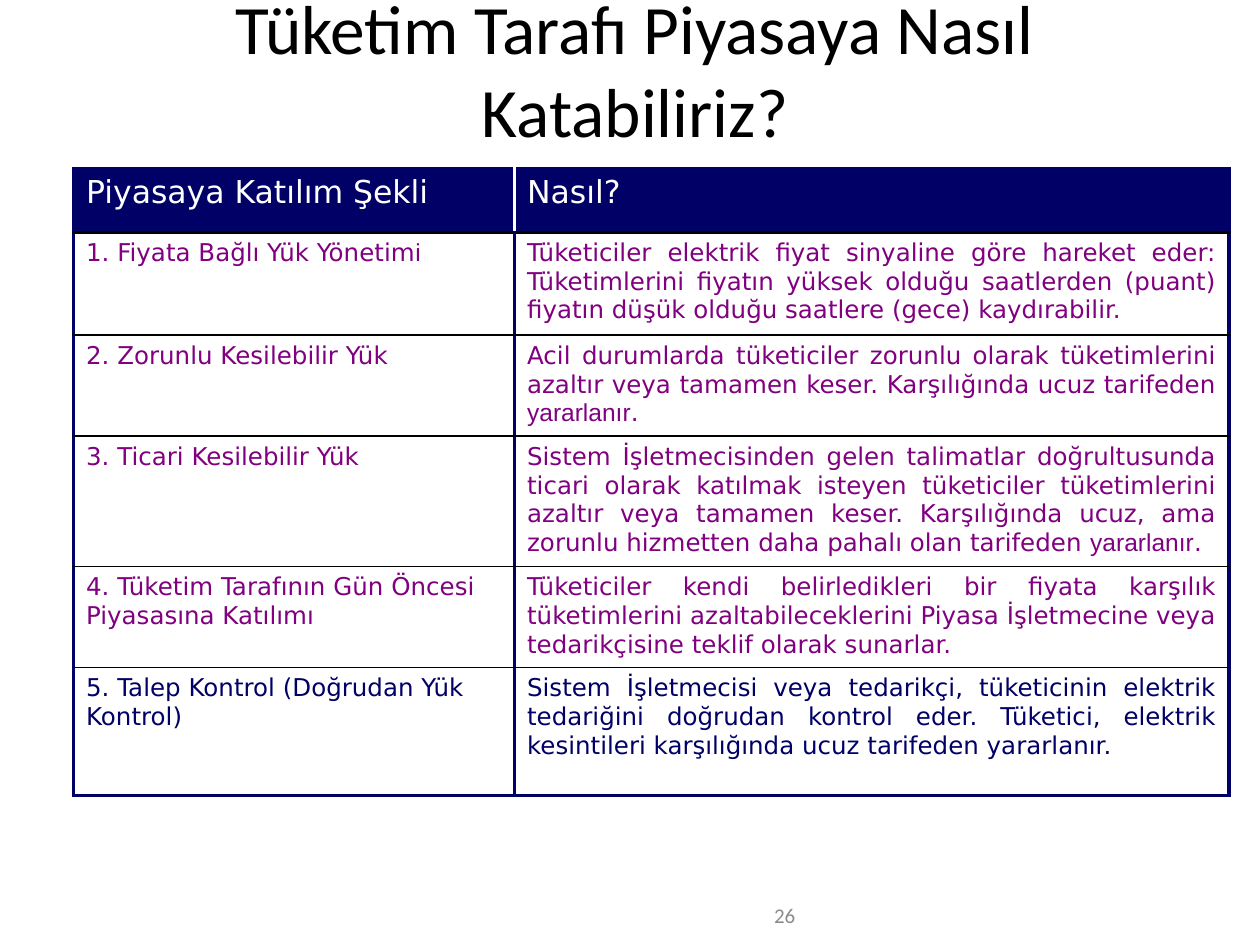
from lxml.etree import SubElement
from pptx import Presentation
from pptx.dml.color import RGBColor
from pptx.enum.text import MSO_ANCHOR, MSO_AUTO_SIZE, PP_ALIGN
from pptx.oxml.ns import qn
from pptx.util import Pt

COLORS = {"navy": "000066", "purple": "800080", "black": "000000",
          "white": "FFFFFF", "gray": "8C8C8C"}
BODY_FONT, ACCENT_FONT, TITLE_FONT = "DejaVu Sans", "Arial", "Calibri"
THICK, THIN = 2.25, 1

COLUMN_WIDTHS = [252, 408.24]
ROW_HEIGHTS = [36.5, 58.9, 56.5, 72.6, 56.5, 73.2]

# Each cell is a list of (text, font) runs
ENDING = [("yararlanır", ACCENT_FONT), (". ", BODY_FONT)]
ROWS = [
    ([("Piyasaya Katılım Şekli", BODY_FONT)], [("Nasıl?", BODY_FONT)]),
    ([("1. Fiyata Bağlı Yük Yönetim", BODY_FONT), ("i", ACCENT_FONT)],
     [("Tüketiciler elektrik fiyat sinyaline göre hareket eder: Tüketimlerini "
       "fiyatın yüksek olduğu saatlerden (puant) fiyatın düşük olduğu saatlere "
       "(gece) kaydırabilir.", BODY_FONT)]),
    ([("2. Zorunlu Kesilebilir Yük", BODY_FONT)],
     [("Acil durumlarda tüketiciler zorunlu olarak tüketimlerini azaltır veya "
       "tamamen keser. Karşılığında ucuz tarifeden ", BODY_FONT)] + ENDING),
    ([("3. Ticari Kesilebilir Yük", BODY_FONT)],
     [("Sistem İşletmecisinden gelen talimatlar doğrultusunda ticari olarak "
       "katılmak isteyen tüketiciler tüketimlerini azaltır veya tamamen keser. "
       "Karşılığında ucuz, ama zorunlu hizmetten daha pahalı olan tarifeden ",
       BODY_FONT)] + ENDING),
    ([("4. Tüketim Tarafının Gün Öncesi Piyasasına Katılımı", BODY_FONT)],
     [("Tüketiciler kendi belirledikleri bir fiyata karşılık tüketimlerini "
       "azaltabileceklerini Piyasa İşletmecine veya tedarikçisine teklif olarak "
       "sunarlar.", BODY_FONT)]),
    ([("5. Talep Kontrol (Doğrudan Yük Kontrol)", BODY_FONT)],
     [("Sistem İşletmecisi veya tedarikçi, tüketicinin elektrik tedariğini "
       "doğrudan kontrol eder. Tüketici, elektrik kesintileri karşılığında ucuz "
       "tarifeden yararlanır. ", BODY_FONT)]),
]


def add_span(para, text, font, size, color):
    span = para.add_run()
    span.text = text
    span.font.name = font
    span.font.size = Pt(size)
    span.font.bold = False
    span.font.color.rgb = RGBColor.from_string(COLORS[color])


def set_borders(cell, borders):
    """Draw (color, width) lines for the left, right, top and bottom sides."""
    properties = cell._tc.get_or_add_tcPr()
    for side, (color, width) in zip("LRTB", borders):
        line = SubElement(properties, qn(f"a:ln{side}"), w=str(Pt(width)))
        fill = SubElement(line, qn("a:solidFill"))
        SubElement(fill, qn("a:srgbClr"), val=COLORS[color])


def cell_borders(row, column):
    last = len(ROWS) - 1
    edge, rule, divider = ("navy", THICK), ("black", THIN), ("white", THICK)
    header_rule = ("black", THICK)
    left = divider if row == 0 and column == 1 else edge
    right = divider if row == 0 and column == 0 else edge
    top = {0: edge, 1: header_rule}.get(row, rule)
    bottom = {0: header_rule, last: edge}.get(row, rule)
    return left, right, top, bottom


def place_title(page, box):
    title = page.shapes.title
    title.left, title.top, title.width, title.height = map(Pt, box)
    frame = title.text_frame
    frame.auto_size = MSO_AUTO_SIZE.NONE
    frame.vertical_anchor = MSO_ANCHOR.MIDDLE
    para = frame.paragraphs[0]
    para.alignment = PP_ALIGN.CENTER
    add_span(para, "Tüketim Tarafı Piyasaya Nasıl Katabiliriz?",
             TITLE_FONT, 39.6, "black")


def place_table(page, box):
    table = page.shapes.add_table(len(ROWS), 2, *map(Pt, box)).table
    table.first_row = table.horz_banding = False
    for column, width in zip(table.columns, COLUMN_WIDTHS):
        column.width = Pt(width)
    for row, height in zip(table.rows, ROW_HEIGHTS):
        row.height = Pt(height)

    for row, contents in enumerate(ROWS):
        header = row == 0
        size = 18 if header else 14
        color = "white" if header else "navy" if row == len(ROWS) - 1 else "purple"
        for column, runs in enumerate(contents):
            cell = table.cell(row, column)
            set_borders(cell, cell_borders(row, column))
            cell.fill.solid()
            cell.fill.fore_color.rgb = RGBColor.from_string(
                COLORS["navy" if header else "white"])
            para = cell.text_frame.paragraphs[0]
            para.alignment = PP_ALIGN.JUSTIFY if column else PP_ALIGN.LEFT
            for text, font in runs:
                add_span(para, text, font, size, color)


def place_page_number(page, box):
    frame = page.shapes.add_textbox(*map(Pt, box)).text_frame
    frame.word_wrap = True
    frame.vertical_anchor = MSO_ANCHOR.MIDDLE
    para = frame.paragraphs[0]
    para.alignment = PP_ALIGN.RIGHT
    add_span(para, "26", TITLE_FONT, 12, "gray")


def main():
    deck = Presentation()
    deck.slide_width, deck.slide_height = Pt(720), Pt(540)
    page = deck.slides.add_slide(deck.slide_layouts[5])
    place_page_number(page, (311.76, 514.08, 149.76, 18))
    place_title(page, (36, 18, 653.76, 41.76))
    place_table(page, (42, 96.2, sum(COLUMN_WIDTHS), sum(ROW_HEIGHTS)))
    deck.save("out.pptx")


if __name__ == "__main__":
    main()
